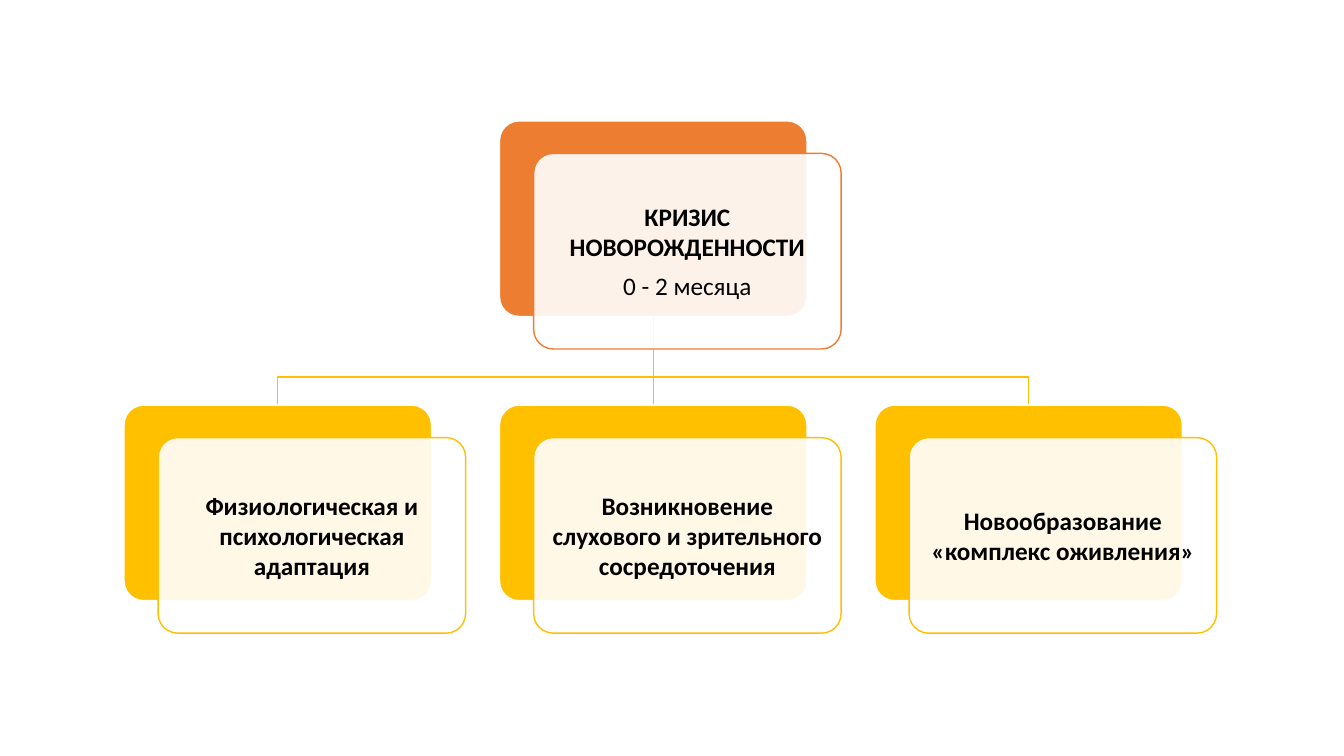
"""Build a slide with the newborn crisis hierarchy: one root card and three branches."""
from lxml import etree
from pptx import Presentation
from pptx.dml.color import RGBColor
from pptx.enum import shapes, text
from pptx.oxml.ns import qn
from pptx.util import Pt

COLORS = {"root": "ED7D31", "branch": "FFC000", "paper": "FFFFFF", "ink": "000000"}
CARD_W, CARD_H = 219.6, 139.7
SHIFT_X, SHIFT_Y = 24.4, 23.2
LEFT, PITCH = 88.6, 268.2
ROOT_TOP, BRANCH_TOP, BUS_Y = 86.4, 289.4, 269.3

FRAME = {
    "word_wrap": True,
    "vertical_anchor": text.MSO_ANCHOR.MIDDLE,
    "margin_left": Pt(5),
    "margin_right": Pt(5),
    "margin_top": Pt(5),
    "margin_bottom": Pt(5),
}
PARAGRAPH = {"alignment": text.PP_ALIGN.CENTER, "space_after": Pt(6.3)}

CARDS = [
    ("root", 1, ROOT_TOP, [("КРИЗИС НОВОРОЖДЕННОСТИ", True), ("0 - 2 месяца", False)]),
    ("branch", 0, BRANCH_TOP, [("Физиологическая и психологическая адаптация", True)]),
    ("branch", 1, BRANCH_TOP, [("Возникновение слухового и зрительного сосредоточения", True)]),
    ("branch", 2, BRANCH_TOP, [("Новообразование «комплекс оживления»", True)]),
]


def color(name):
    return RGBColor.from_string(COLORS[name])


def add_card(page, left, top, fill, line):
    card = page.shapes.add_shape(
        shapes.MSO_SHAPE.ROUNDED_RECTANGLE, Pt(left), Pt(top), Pt(CARD_W), Pt(CARD_H))
    card.adjustments[0] = 0.1
    card.shadow.inherit = False
    card.fill.solid()
    card.fill.fore_color.rgb = color(fill)
    card.line.color.rgb = color(line)
    card.line.width = Pt(1)
    return card


deck = Presentation()
deck.slide_width, deck.slide_height = Pt(960), Pt(540)
page = deck.slides.add_slide(deck.slide_layouts[6])

root_x, root_bottom = LEFT + PITCH + CARD_W / 2, ROOT_TOP + CARD_H
for column in (2, 1, 0):
    branch_x = LEFT + column * PITCH + CARD_W / 2
    if column == 1:
        link = page.shapes.add_connector(
            shapes.MSO_CONNECTOR.STRAIGHT,
            Pt(root_x), Pt(root_bottom), Pt(root_x), Pt(BRANCH_TOP))
        etree.SubElement(link._element.spPr, qn("a:effectLst"))
    else:
        outline = page.shapes.build_freeform(Pt(root_x), Pt(root_bottom))
        corners = [(root_x, BUS_Y), (branch_x, BUS_Y), (branch_x, BRANCH_TOP)]
        outline.add_line_segments([(Pt(x), Pt(y)) for x, y in corners], close=False)
        link = outline.convert_to_shape()
        link.fill.background()
        link.shadow.inherit = False
    link.line.color.rgb = color("branch")
    link.line.width = Pt(1)

for level, column, top, lines in CARDS:
    left = LEFT + column * PITCH
    add_card(page, left, top, level, "paper")
    front = add_card(page, left + SHIFT_X, top + SHIFT_Y, "paper", level)
    tint = front._element.spPr.find(qn("a:solidFill")).find(qn("a:srgbClr"))
    etree.SubElement(tint, qn("a:alpha"), val="90000")

    frame = front.text_frame
    for name, value in FRAME.items():
        setattr(frame, name, value)
    for index, (words, bold) in enumerate(lines):
        para = frame.add_paragraph() if index else frame.paragraphs[0]
        for name, value in PARAGRAPH.items():
            setattr(para, name, value)
        span = para.add_run()
        span.text = words
        for name, value in {"name": "Calibri", "size": Pt(18), "bold": bold}.items():
            setattr(span.font, name, value)
        span.font.color.rgb = color("ink")

deck.save("out.pptx")
